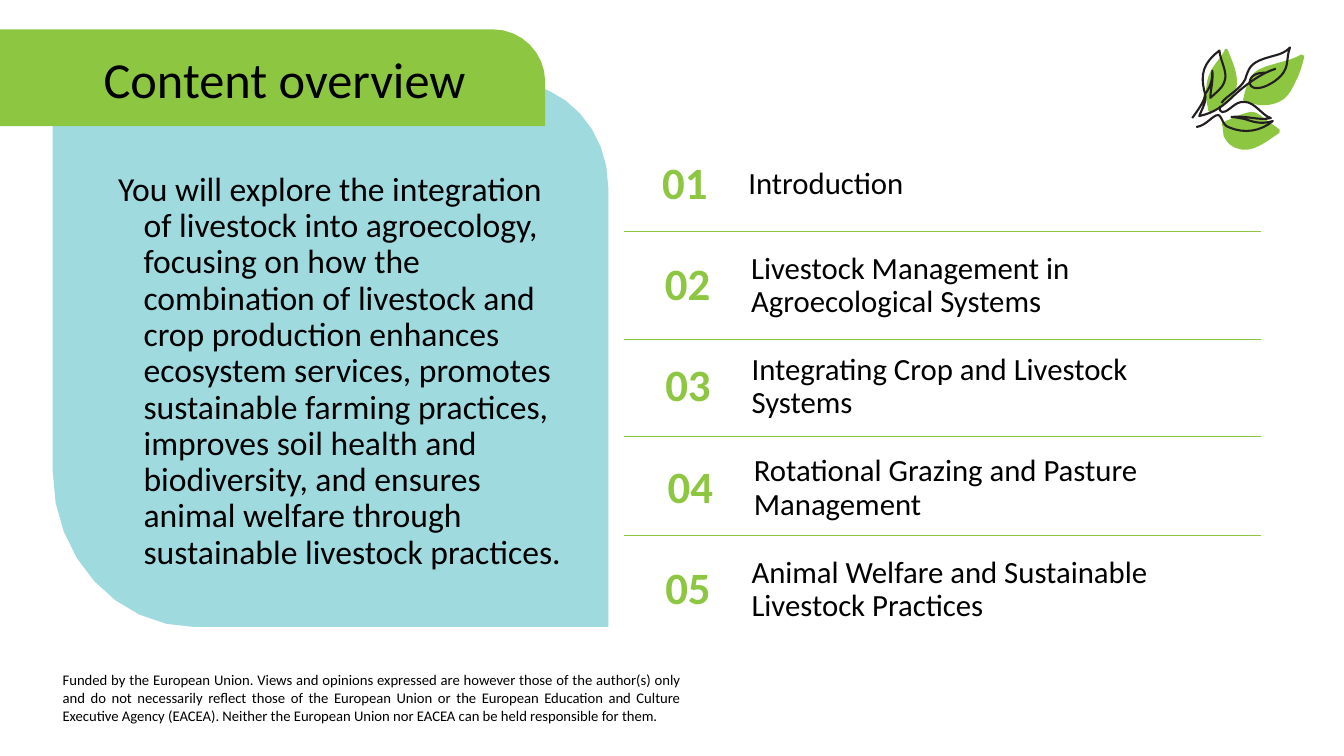
from lxml import etree
from pptx import Presentation
from pptx.dml.color import RGBColor
from pptx.enum.shapes import MSO_CONNECTOR
from pptx.enum.text import MSO_ANCHOR, PP_ALIGN
from pptx.oxml.ns import qn
from pptx.util import Cm, Pt

STRAIGHT = MSO_CONNECTOR.STRAIGHT
TOP, MIDDLE = MSO_ANCHOR.TOP, MSO_ANCHOR.MIDDLE
LEFT, CENTER, JUSTIFY = PP_ALIGN.LEFT, PP_ALIGN.CENTER, PP_ALIGN.JUSTIFY
GREEN, TEAL, BLACK, INK = "8DC641", "9FDADF", "000000", "231F20"
FONT = "Calibri"
ROUNDING = 0.45
CURVE_STEPS = 8
SPRIG_UNIT = 0.0254

SUMMARY = (
    "You will explore the integration of livestock into agroecology, focusing on how "
    "the combination of livestock and crop production enhances ecosystem services, "
    "promotes sustainable farming practices, improves soil health and biodiversity, "
    "and ensures animal welfare through sustainable livestock practices."
)
DISCLAIMER = (
    "Funded by the European Union. Views and opinions expressed are however those of "
    "the author(s) only and do not necessarily reflect those of the European Union or "
    "the European Education and Culture Executive Agency (EACEA). Neither the European "
    "Union nor EACEA can be held responsible for them."
)
TOPICS = [
    ("Introduction", 0),
    ("Livestock Management in Agroecological Systems", 0.07),
    ("Integrating Crop and Livestock Systems", 0.08),
    ("Rotational Grazing and Pasture Management", 0.14),
    ("Animal Welfare and Sustainable Livestock Practices", 0.08),
]
DIVIDER_OFFSETS = [2.13, 4.85, 7.29, 9.78]

LEAVES = [
    [(25, 70), (35, 65, 45, 57, 47, 46), (49, 34, 43, 21, 38, 9), (38, 8, 35, 8, 35, 10),
     (32, 16, 28, 20, 24, 26), (21, 30, 19, 35, 18, 40), (16, 49, 16, 59, 19, 68),
     (18, 69, 20, 72, 22, 71)],
    [(94, 58), (100, 53, 103, 46, 106, 40), (110, 32, 112, 25, 114, 17),
     (114, 15, 113, 14, 111, 14), (104, 18, 97, 20, 89, 22), (83, 24, 77, 25, 71, 28),
     (66, 30, 62, 34, 60, 39), (57, 45, 55, 51, 54, 57), (53, 59, 54, 60, 55, 60),
     (68, 66, 83, 66, 94, 58)],
    [(89, 92), (90, 91, 90, 89, 89, 88), (84, 84, 79, 81, 74, 77), (70, 74, 67, 71, 62, 71),
     (58, 71, 54, 73, 50, 74), (46, 76, 42, 77, 39, 79), (38, 79, 36, 80, 35, 81),
     (32, 82, 32, 84, 33, 85), (33, 88, 34, 92, 34, 94), (36, 100, 41, 105, 47, 107),
     (62, 113, 77, 100, 89, 92)],
]
STROKES = [
    [(3, 77), (11, 66, 18, 56, 15, 50), (11, 34, 14, 22, 30, 10), (31, 20, 36, 27, 36, 36),
     (35, 45, 31, 48, 21, 57), (21, 50, 24, 40, 23, 30), (23, 40, 21, 46, 16, 53),
     (17, 62, 13, 67, 10, 75), (25, 72, 35, 64, 44, 55), (55, 45, 70, 33, 86, 28)],
    [(32, 62), (36, 55, 55, 47, 57, 34), (60, 26, 62, 21, 81, 16), (88, 14, 94, 13, 100, 7),
     (97, 14, 98, 24, 95, 29), (92, 37, 78, 46, 70, 47), (64, 48, 60, 46, 60, 41),
     (61, 34, 68, 32, 75, 32)],
    [(7, 86), (18, 84, 23, 74, 29, 74), (33, 76, 33, 84, 39, 86), (55, 93, 71, 90, 83, 80),
     (70, 84, 62, 80, 55, 78), (50, 77, 45, 76, 42, 76), (55, 74, 70, 80, 81, 77),
     (73, 75, 65, 61, 55, 61), (45, 60, 40, 71, 33, 71), (30, 70, 30, 68, 31, 65)],
]


def rgb(color):
    """Turn a hex string into a colour."""
    return RGBColor.from_string(color)


def trace(segments):
    """Flatten a start point, line ends and cubic curves into points."""
    points = [segments[0]]
    for segment in segments[1:]:
        if len(segment) == 2:
            points.append(segment)
            continue
        x0, y0 = points[-1]
        x1, y1, x2, y2, x3, y3 = segment
        for step in range(1, CURVE_STEPS + 1):
            t = step / CURVE_STEPS
            a, b, c, d = (1 - t) ** 3, 3 * t * (1 - t) ** 2, 3 * t * t * (1 - t), t ** 3
            points.append((a * x0 + b * x1 + c * x2 + d * x3,
                           a * y0 + b * y1 + c * y2 + d * y3))
    return points


def add_outline(slide, left, top, segments, unit=1, fill=None, line=None):
    """Draw a closed filled outline, or an open stroke when only a line is given."""
    points = [(Cm(left + x * unit), Cm(top + y * unit)) for x, y in trace(segments)]
    builder = slide.shapes.build_freeform(*points[0])
    builder.add_line_segments(points[1:], close=fill is not None)
    outline = builder.convert_to_shape()
    outline.shadow.inherit = False
    if fill:
        outline.fill.solid()
        outline.fill.fore_color.rgb = rgb(fill)
    else:
        outline.fill.background()
    if line:
        outline.line.color.rgb = rgb(line)
        outline.line.width = Pt(1.5)
    else:
        outline.line.fill.background()


def add_text(slide, box, text, size, color=BLACK, bold=False, align=LEFT,
             anchor=MIDDLE, spacing=0.9, hanging=0):
    """Place one wrapped paragraph in a box."""
    frame = slide.shapes.add_textbox(*map(Cm, box)).text_frame
    frame.word_wrap = True
    frame.vertical_anchor = anchor
    paragraph = frame.paragraphs[0]
    paragraph.alignment = align
    paragraph.line_spacing = spacing
    if hanging:
        properties = paragraph._p.get_or_add_pPr()
        properties.set("marL", str(Cm(hanging)))
        properties.set("indent", str(-Cm(hanging)))
    run = paragraph.add_run()
    run.text = text
    run.font.name = FONT
    run.font.size = Pt(size)
    run.font.bold = bold
    run.font.color.rgb = rgb(color)


def add_divider(slide, left, top, width):
    """Draw a horizontal green line."""
    divider = slide.shapes.add_connector(
        STRAIGHT, Cm(left + width), Cm(top), Cm(left), Cm(top))
    divider.line.color.rgb = rgb(GREEN)
    divider.line.width = Pt(1)
    etree.SubElement(divider._element.spPr, qn("a:effectLst"))


def add_summary_panel(slide, left, top, width, height):
    """Build the teal panel with two rounded corners and its summary."""
    foot_x, foot_y, head_x, head_y = 3.58, 3.91, 2.44, 2.64
    add_outline(slide, left, top, [
        (width, height), (foot_x, height),
        (foot_x * ROUNDING, height, 0, height - foot_y * ROUNDING, 0, height - foot_y),
        (0, 0), (width - head_x, 0),
        (width - head_x * ROUNDING, 0, width, head_y * ROUNDING, width, head_y),
    ], fill=TEAL)
    add_text(slide, (left + 1.4, top + 2.14, 11.66, 11.07), SUMMARY, 24,
             anchor=TOP, hanging=0.64)


def add_title_banner(slide, left, top, width, height):
    """Build the green banner with one rounded corner and the title."""
    corner = 1.32
    add_outline(slide, left, top, [
        (0, 0), (width - corner, 0),
        (width - corner * ROUNDING, 0, width, corner * ROUNDING, width, corner),
        (width, height), (0, height),
    ], fill=GREEN)
    add_text(slide, (left + 2.36, top + 0.33, 14, 2.01), "Content overview", 36)


def add_topic_list(slide, left, top, width):
    """Build the numbered topics and the lines between them."""
    for offset in DIVIDER_OFFSETS:
        add_divider(slide, left, top + offset, width)
    for index, (topic, nudge) in enumerate(TOPICS):
        row_left, row_top = left + 0.56 + nudge, top + index * 2.55
        add_text(slide, (row_left, row_top, 1.96, 1.9), f"{index + 1:02}", 32,
                 color=GREEN, bold=True, align=CENTER)
        add_text(slide, (row_left + 2.33, row_top, 12.4, 1.9), topic, 22)


def add_sprig(slide, left, top):
    """Draw the green leaves and the ink strokes over them."""
    for leaf in LEAVES:
        add_outline(slide, left, top, leaf, SPRIG_UNIT, fill=GREEN)
    for stroke in STROKES:
        add_outline(slide, left, top, stroke, SPRIG_UNIT, line=INK)


def main():
    """Build the content overview slide."""
    deck = Presentation()
    deck.slide_width, deck.slide_height = Cm(33.87), Cm(19.05)
    slide = deck.slides.add_slide(deck.slide_layouts[6])
    add_summary_panel(slide, 1.33, 2.08, 14, 13.72)
    add_title_banner(slide, 0, 0.74, 13.74, 2.44)
    add_topic_list(slide, 15.72, 3.71, 16.05)
    add_text(slide, (1.33, 16.79, 16.08, 1.68), DISCLAIMER, 10.5,
             align=JUSTIFY, anchor=TOP, spacing=1)
    add_sprig(slide, 29.97, 1.02)
    deck.save("out.pptx")


if __name__ == "__main__":
    main()
